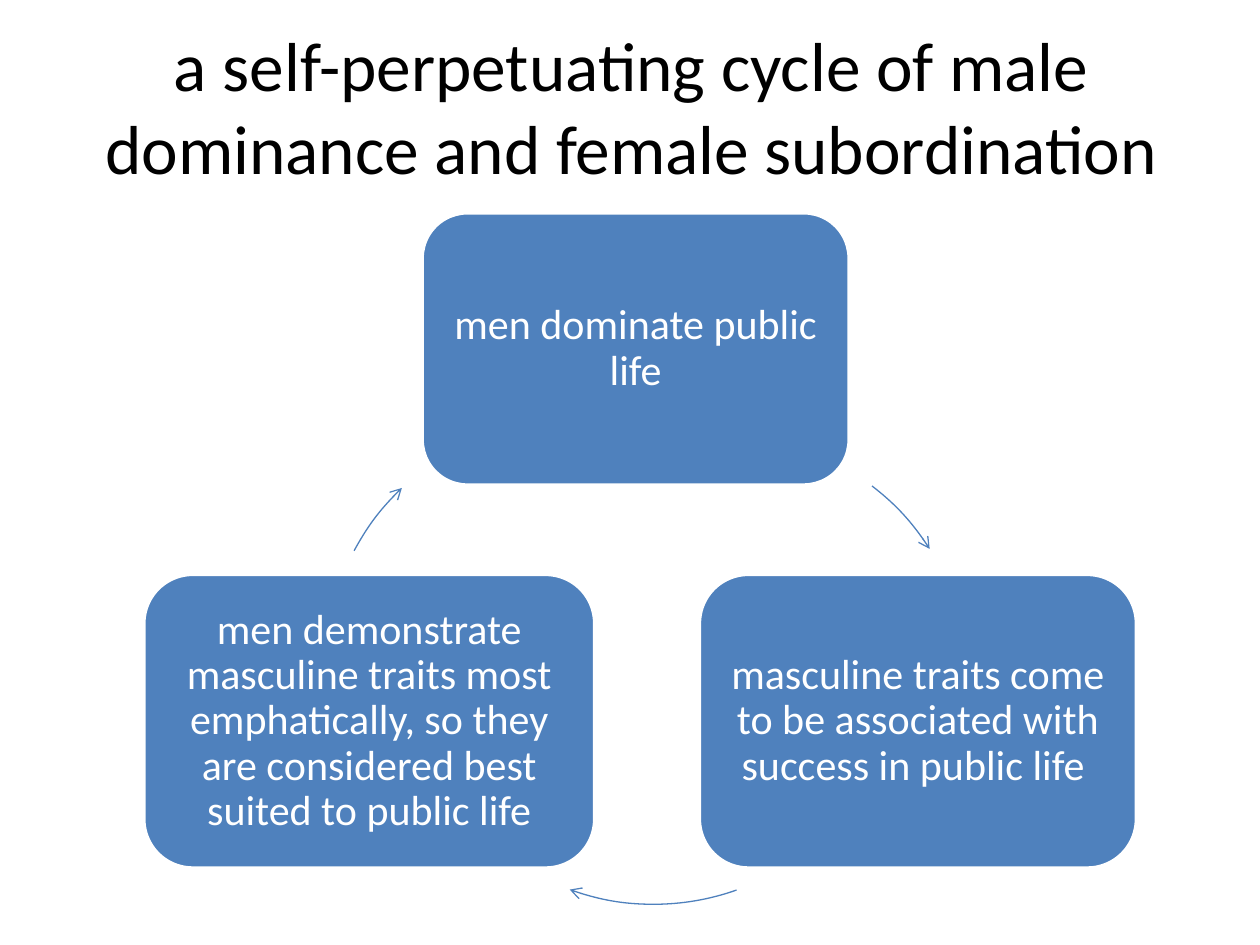
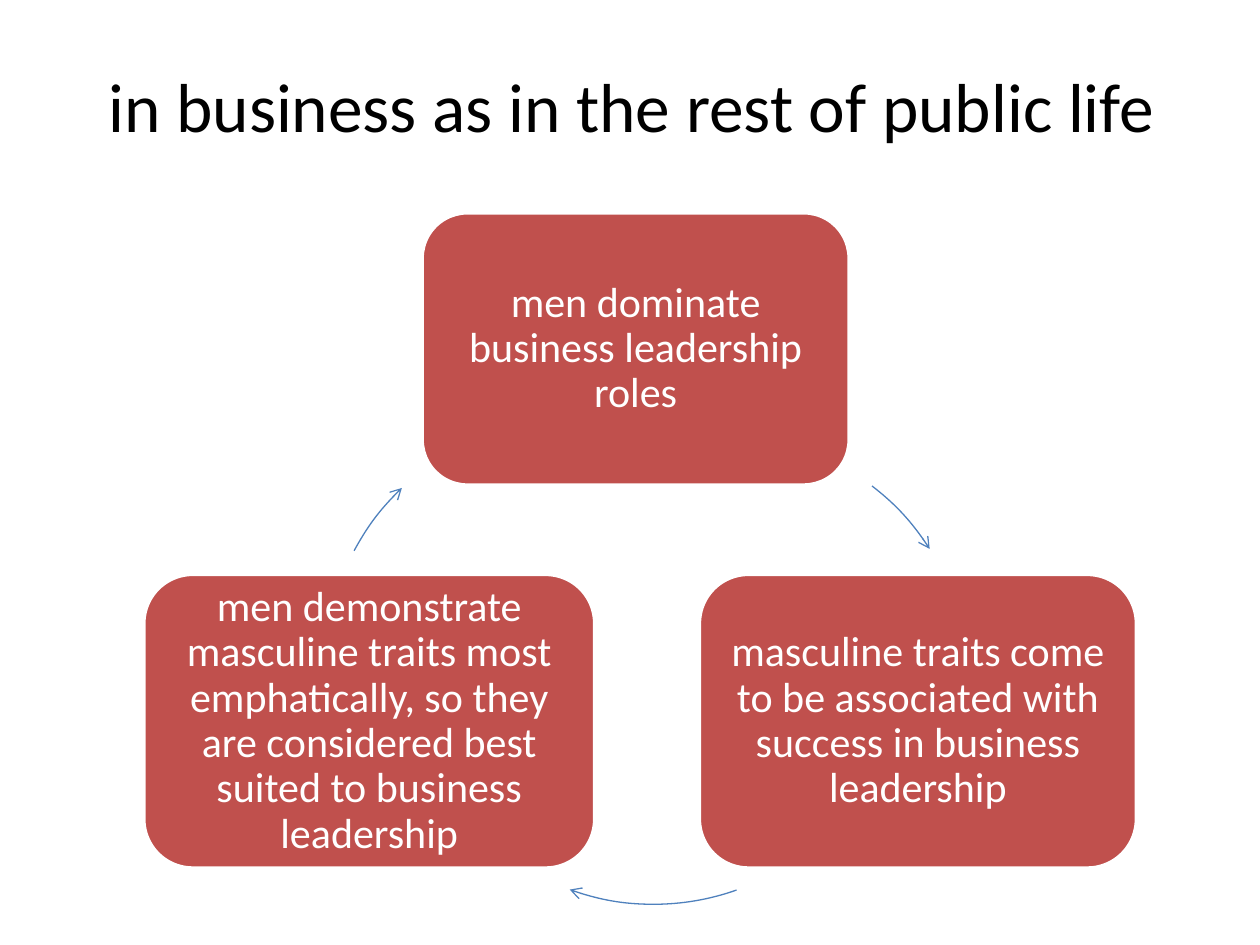
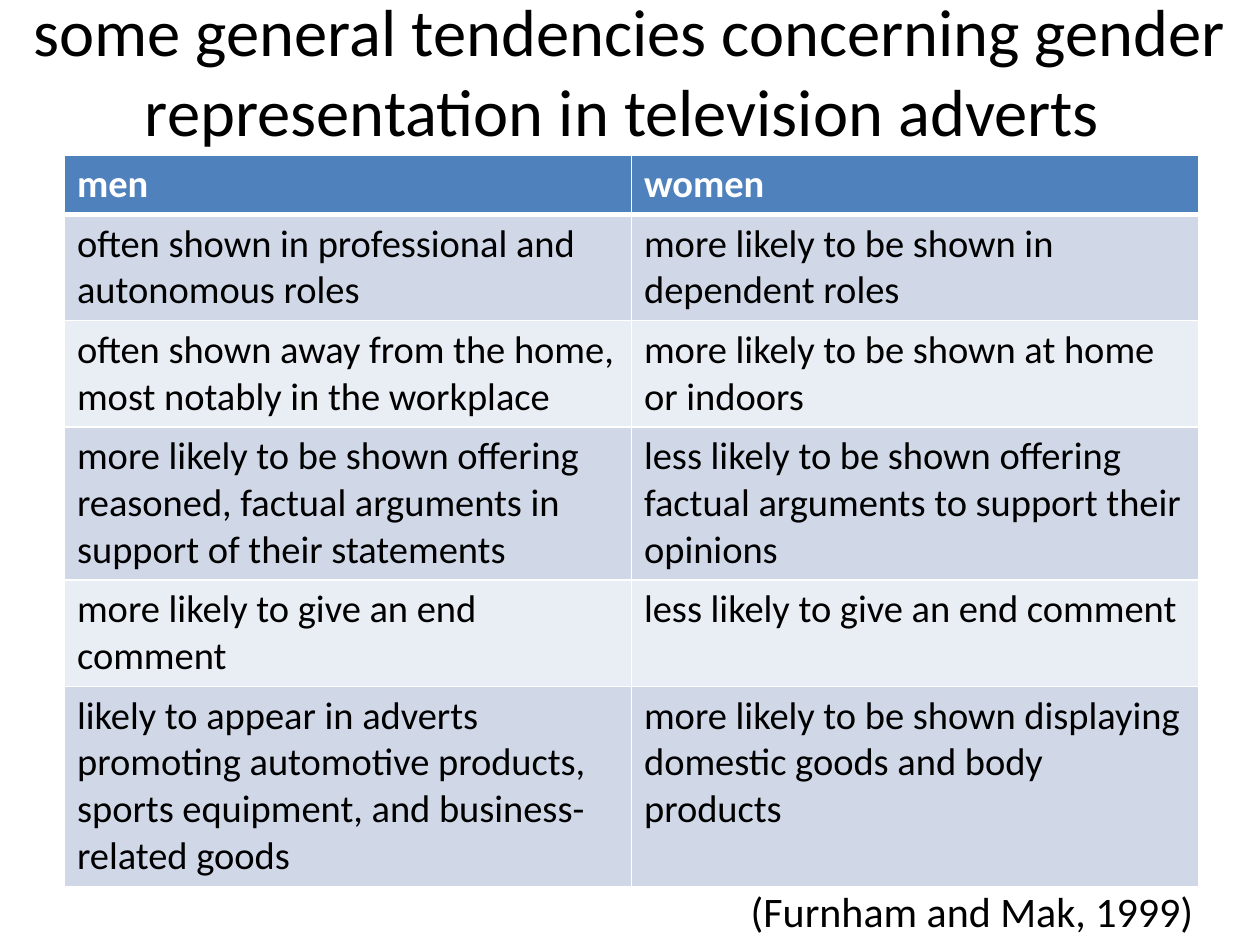
from lxml.etree import SubElement
from pptx import Presentation
from pptx.dml.color import RGBColor
from pptx.enum.shapes import MSO_SHAPE as Preset
from pptx.enum.text import MSO_ANCHOR as Anchor, MSO_AUTO_SIZE as AutoSize, PP_ALIGN as Align
from pptx.oxml.ns import qn
from pptx.util import Cm, Pt

FONT = "Calibri"
BLUE, RED, WHITE, BLACK = "4F81BD", "C0504D", "FFFFFF", "000000"
BANDS = ("D0D8E8", "E9EDF4")
TITLE_ONLY = 5

# Centimetres: left, top, width, height
TITLE_PLACE = (1.3, 0.53, 22.86, 3.18)
WIDE_TITLE_PLACE = (0.25, 0.33, 24.9, 2.16)
CAPTION_PLACE = (14.1, 17.73, 10.21, 1.27)
TABLE_LEFT, TABLE_TOP, TABLE_WIDTH = 1.3, 3.12, 22.86
CELL_PADDING, LINE_HEIGHT = 0.25, 0.94

STEP_PLACES = [(8.51, 4.29, 8.61, 5.49), (14.1, 11.58, 8.81, 5.92), (2.9, 11.58, 9.09, 5.92)]
# Left and top of each arrow's circle, then its start and end in degrees
ARROWS = [(9.53, 8.76, 307.6, 327.4), (8.18, 8.23, 70.5, 109.8), (6.55, 8.46, 208.1, 226.4)]
ARROW_CIRCLE = 10

CYCLES = [
    ("a self-perpetuating cycle of male dominance and female subordination", BLUE, [
        "men dominate public life",
        "masculine traits come to be associated with success in public life ",
        "men demonstrate masculine traits most emphatically, "
        "so they are considered best suited to public life",
    ]),
    ("in business as in the rest of public life", RED, [
        "men dominate business leadership roles",
        "masculine traits come to be associated with success in business leadership",
        "men demonstrate masculine traits most emphatically, "
        "so they are considered best suited to business leadership",
    ]),
]

ADVERTS_TITLE = ("some general tendencies concerning gender "
                 "representation in television adverts ")
ADVERTS_SOURCE = "(Furnham and Mak, 1999)"
# Lines of text in the row, then its two cells
ADVERTS_ROWS = [
    (1, "men", "women"),
    (2, "often shown in professional and autonomous roles",
     "more likely to be shown in dependent roles"),
    (2, "often shown away from the home, most notably in the workplace",
     "more likely to be shown at home or indoors"),
    (3, "more likely to be shown offering reasoned, factual arguments "
        "in support of their statements",
     "less likely to be shown offering factual arguments to support their opinions"),
    (2, "more likely to give an end comment", "less likely to give an end comment"),
    (4, "likely to appear in adverts promoting automotive products, "
        "sports equipment, and business-related goods",
     "more likely to be shown displaying domestic goods and body products"),
]


def colour(code):
    return RGBColor.from_string(code)


def lengths(place):
    return [Cm(value) for value in place]


def fill_with(target, code):
    target.fill.solid()
    target.fill.fore_color.rgb = colour(code)


def write(frame, text, size, code=BLACK, bold=False, align=Align.LEFT, spacing=None, **frame_format):
    for name, value in {"word_wrap": True, **frame_format}.items():
        setattr(frame, name, value)
    para = frame.paragraphs[0]
    para.alignment, para.line_spacing = align, spacing
    span = para.add_run()
    span.text = text
    for name, value in {"name": FONT, "size": Pt(size), "bold": bold}.items():
        setattr(span.font, name, value)
    span.font.color.rgb = colour(code)


def add_page(deck, title, place=TITLE_PLACE, size=39.6):
    page = deck.slides.add_slide(deck.slide_layouts[TITLE_ONLY])
    box = page.shapes.title
    box.left, box.top, box.width, box.height = lengths(place)
    write(box.text_frame, title, size, align=Align.CENTER,
          vertical_anchor=Anchor.MIDDLE, auto_size=AutoSize.NONE)
    return page


def outline(shape, code, width):
    shape.shadow.inherit = False
    shape.line.color.rgb = colour(code)
    shape.line.width = Pt(width)


def add_step(shapes, text, place, code):
    box = shapes.add_shape(Preset.ROUNDED_RECTANGLE, *lengths(place))
    fill_with(box, code)
    outline(box, WHITE, 2)
    margins = {f"margin_{side}": Cm(0.25) for side in ("left", "top", "right", "bottom")}
    write(box.text_frame, text, 24, WHITE, align=Align.CENTER, spacing=0.9,
          vertical_anchor=Anchor.MIDDLE, **margins)


def add_arrow(shapes, left, top, start, end):
    arc = shapes.add_shape(Preset.ARC, *lengths((left, top, ARROW_CIRCLE, ARROW_CIRCLE)))
    for index, degrees in enumerate((start, end)):
        arc.adjustments[index] = degrees * 0.6  # 60000 units a degree, scaled by 100000
    arc.fill.background()
    outline(arc, BLUE, 0.75)
    SubElement(arc.element.spPr.find(qn("a:ln")), qn("a:tailEnd"), type="arrow")


def add_cycle(deck, title, code, steps):
    shapes = add_page(deck, title).shapes.add_group_shape().shapes
    for text, place, arrow in zip(steps, STEP_PLACES, ARROWS):
        add_step(shapes, text, place, code)
        add_arrow(shapes, *arrow)


def border_cell(cell, widths):
    """Draw white borders; widths are points for left, right, top and bottom."""
    properties = cell._tc.get_or_add_tcPr()
    for index, (side, width) in enumerate(zip("LRTB", widths)):
        line = SubElement(properties, qn(f"a:ln{side}"), w=str(Pt(width)))
        SubElement(SubElement(line, qn("a:solidFill")), qn("a:srgbClr"), val=WHITE)
        properties.insert(index, line)


def add_adverts_table(page):
    heights = [Cm(CELL_PADDING + LINE_HEIGHT * row[0]) for row in ADVERTS_ROWS]
    table = page.shapes.add_table(len(ADVERTS_ROWS), 2, Cm(TABLE_LEFT), Cm(TABLE_TOP),
                                  Cm(TABLE_WIDTH), sum(heights)).table
    for row, (_, *texts) in enumerate(ADVERTS_ROWS):
        table.rows[row].height = heights[row]
        header = row == 0
        for column, text in enumerate(texts):
            cell = table.cell(row, column)
            fill_with(cell, BLUE if header else BANDS[(row - 1) % 2])
            border_cell(cell, (1, 1, 3 if row == 1 else 1, 3 if header else 1))
            write(cell.text_frame, text, 22, WHITE if header else BLACK, bold=header)


def add_adverts(deck):
    page = add_page(deck, ADVERTS_TITLE, WIDE_TITLE_PLACE, 38)
    add_adverts_table(page)
    caption = page.shapes.add_textbox(*lengths(CAPTION_PLACE))
    write(caption.text_frame, ADVERTS_SOURCE, 24, align=Align.RIGHT)


def main():
    deck = Presentation()
    deck.slide_width, deck.slide_height = Cm(25.4), Cm(19.05)
    for cycle in CYCLES:
        add_cycle(deck, *cycle)
    add_adverts(deck)
    deck.save("out.pptx")


if __name__ == "__main__":
    main()
